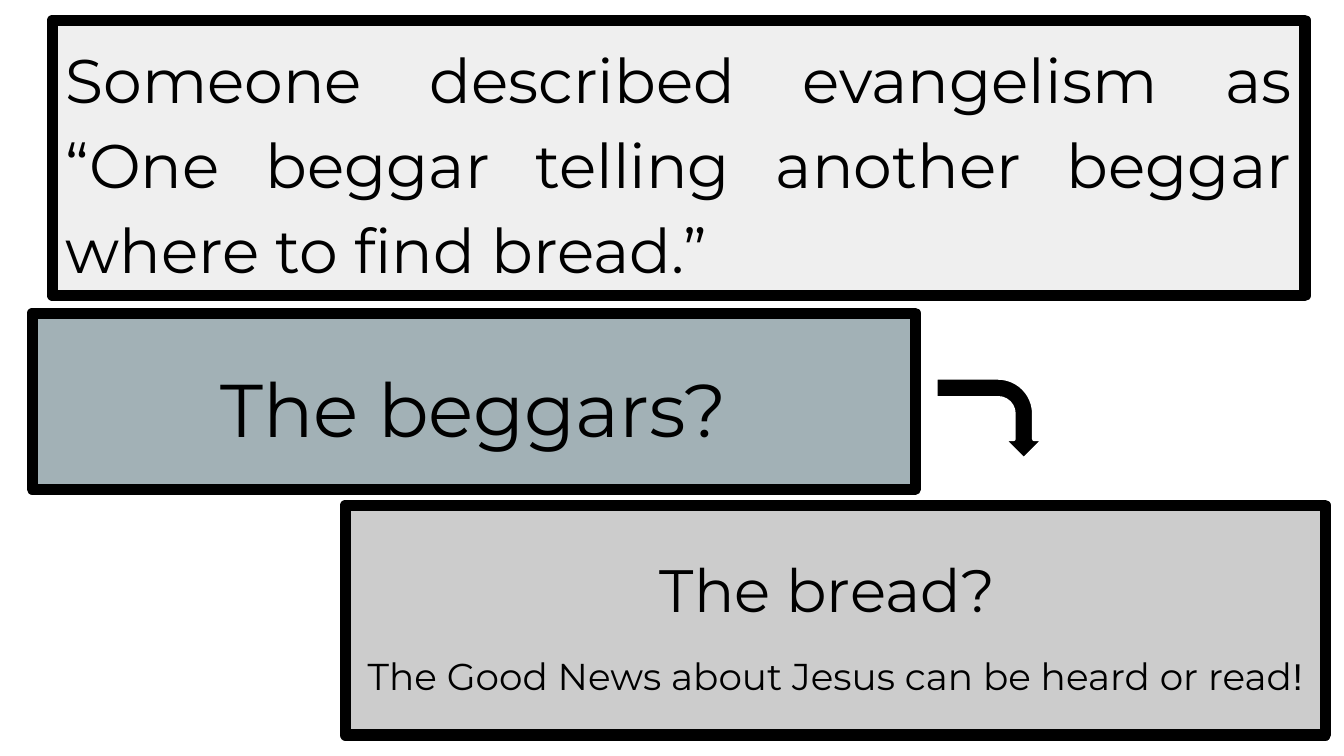
from pptx import Presentation
from pptx.dml.color import RGBColor
from pptx.enum.shapes import MSO_SHAPE
from pptx.enum.text import MSO_ANCHOR, PP_ALIGN
from pptx.util import Inches, Pt

RECTANGLE = MSO_SHAPE.RECTANGLE
BENT_ARROW = MSO_SHAPE.BENT_ARROW
MIDDLE = MSO_ANCHOR.MIDDLE
CENTER = PP_ALIGN.CENTER
JUSTIFY = PP_ALIGN.JUSTIFY

BLACK = RGBColor(0x00, 0x00, 0x00)
WHITE = RGBColor(0xFF, 0xFF, 0xFF)
PALE_GRAY = RGBColor(0xEF, 0xEF, 0xEF)
BLUE_GRAY = RGBColor(0xA2, 0xB1, 0xB6)
MID_GRAY = RGBColor(0xCC, 0xCC, 0xCC)

QUOTE = "Someone described evangelism as “One beggar telling another beggar where to find bread.”"
NEWS = "The Good News about Jesus can be heard or read"

PANELS = [
    ((0.39, 0.15, 9.32, 2.05), PALE_GRAY, JUSTIFY, [(33, [(QUOTE, "Montserrat")])]),
    ((0.24, 2.33, 6.57, 1.31), BLUE_GRAY, CENTER, [(40, [("The beggars?", "Montserrat")])]),
    ((2.57, 3.76, 7.29, 1.71), MID_GRAY, CENTER, [
        (32, [("The bread? ", "Montserrat")]),
        (20, [(NEWS, "Montserrat"), ("!", "Arial")]),
    ]),
]
ARROW_BOX = (7.06, 2.71, 0.61, 0.81)
ARROW_ADJUSTMENTS = (0.25, 0.25, 0.25, 0.44)


def add_box(slide, kind, box, fill, line, line_width):
    shape = slide.shapes.add_shape(kind, *map(Inches, box))
    shape.shadow.inherit = False
    shape.fill.solid()
    shape.fill.fore_color.rgb = fill
    shape.line.color.rgb = line
    shape.line.width = Pt(line_width)
    return shape


def write_text(paragraph, runs, size, alignment, space_before):
    paragraph.alignment = alignment
    paragraph.line_spacing = 1.15
    paragraph.space_before = Pt(space_before)
    for text, font_name in runs:
        run = paragraph.add_run()
        run.text = text
        run.font.name = font_name
        run.font.size = Pt(size)
        run.font.color.rgb = BLACK


def add_panel(slide, box, fill, alignment, lines):
    frame = add_box(slide, RECTANGLE, box, fill, BLACK, 6).text_frame
    frame.word_wrap = True
    frame.vertical_anchor = MIDDLE
    frame.margin_left = frame.margin_right = Inches(0.1)
    frame.margin_top = frame.margin_bottom = Inches(0.1)
    for index, (size, runs) in enumerate(lines):
        paragraph = frame.add_paragraph() if index else frame.paragraphs[0]
        write_text(paragraph, runs, size=size, alignment=alignment,
                   space_before=12 if index else 0)


def main():
    presentation = Presentation()
    presentation.slide_width = Inches(10)
    presentation.slide_height = Inches(10 * 9 / 16)
    slide = presentation.slides.add_slide(presentation.slide_layouts[6])
    for panel in PANELS:
        add_panel(slide, *panel)
    arrow = add_box(slide, BENT_ARROW, ARROW_BOX, BLACK, WHITE, 2.25)
    arrow.rotation = 90
    for index, value in enumerate(ARROW_ADJUSTMENTS):
        arrow.adjustments[index] = value
    presentation.save("out.pptx")


if __name__ == "__main__":
    main()
